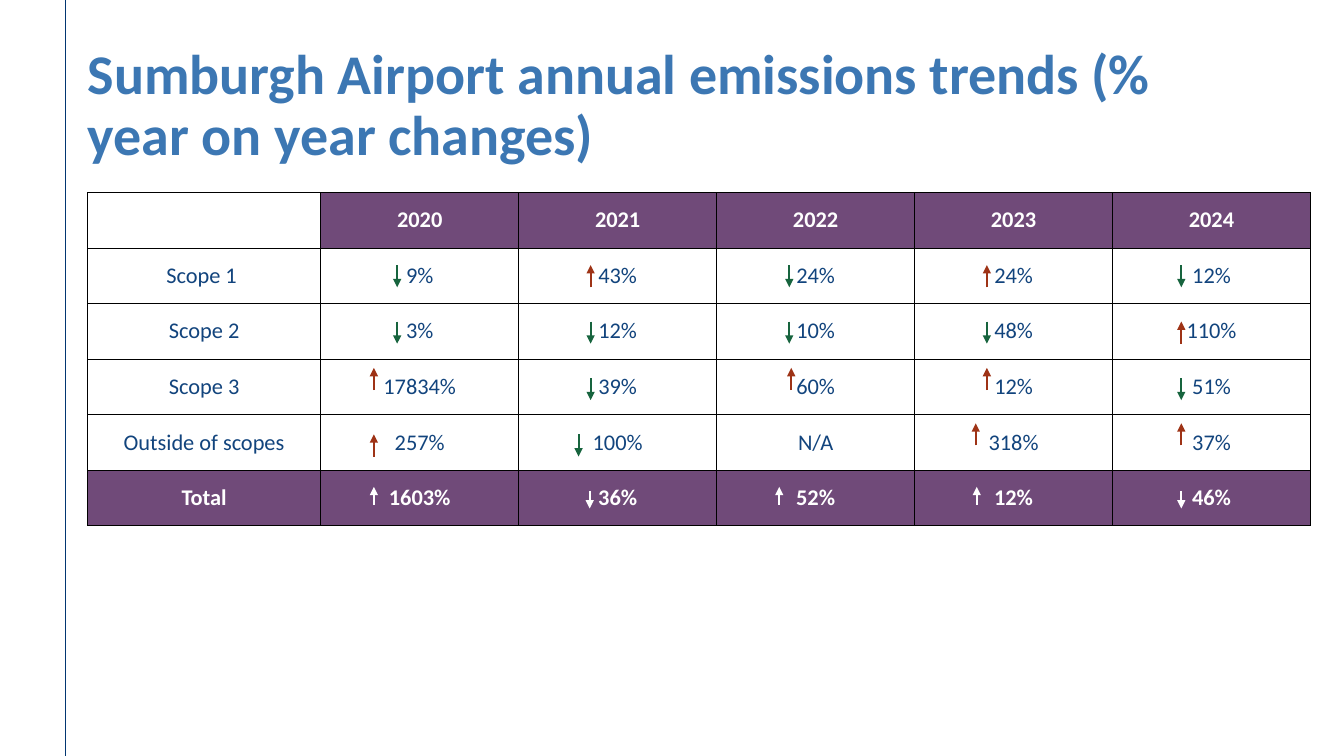
"""Build the Sumburgh Airport annual emissions trends slide."""
from lxml import etree
from pptx import Presentation
from pptx.dml.color import RGBColor
from pptx.enum.shapes import MSO_CONNECTOR
from pptx.enum.text import MSO_ANCHOR, PP_ALIGN
from pptx.oxml import parse_xml
from pptx.oxml.ns import nsdecls, qn
from pptx.util import Pt

STRAIGHT = MSO_CONNECTOR.STRAIGHT
TOP, MIDDLE = MSO_ANCHOR.TOP, MSO_ANCHOR.MIDDLE
LEFT, CENTER = PP_ALIGN.LEFT, PP_ALIGN.CENTER
PURPLE, WHITE, NAVY, BLUE = "704A79", "FFFFFF", "12447D", "3C77B3"
RED, GREEN = "9E3316", "17643E"


def write_text(frame, text, size=16, color=NAVY, bold=False, align=CENTER, anchor=MIDDLE, spacing=1.0):
    frame.word_wrap = True
    frame.vertical_anchor = anchor
    frame.margin_left = frame.margin_right = frame.margin_top = frame.margin_bottom = 0
    paragraph = frame.paragraphs[0]
    paragraph.alignment = align
    paragraph.line_spacing = spacing
    run = paragraph.add_run()
    run.text = text
    run.font.name = "Calibri"
    run.font.size = Pt(size)
    run.font.bold = bold
    run.font.color.rgb = RGBColor.from_string(color)


def draw_line(shapes, x, start, end, color, width, arrow=False):
    connector = shapes.add_connector(STRAIGHT, Pt(x), Pt(start), Pt(x), Pt(end))
    connector.line.color.rgb = RGBColor.from_string(color)
    connector.line.width = Pt(width)
    if arrow:
        etree.SubElement(connector.line._get_or_add_ln(), qn("a:tailEnd"), type="triangle")
    etree.SubElement(connector._element.spPr, qn("a:effectLst"))


presentation = Presentation()
presentation.slide_width, presentation.slide_height = Pt(960), Pt(540)
slide = presentation.slides.add_slide(presentation.slide_layouts[6])
shapes = slide.shapes

draw_line(shapes, 46.8, 0, 540, "023671", 1)
title = shapes.add_textbox(Pt(62.6), Pt(33.1), Pt(789), Pt(76.3))
write_text(title.text_frame, "Sumburgh Airport annual emissions trends (% year on year changes)",
           size=40, color=BLUE, bold=True, align=LEFT, anchor=TOP, spacing=0.9)

rows = [
    ["", "2020", "2021", "2022", "2023", "2024"],
    ["Scope 1 ", "9%", "43%", "24%", "24%", "12%"],
    ["Scope 2", "3%", "12%", "10%", "48%", "110%"],
    ["Scope 3", "17834%", "39%", "60%", "12%", "51%"],
    ["Outside of scopes", "257%", "100%", "N/A", "318%", "37%"],
    ["Total", "1603%", "36%", "52%", "12%", "46%"],
]
column_widths = [166.6] + [141.4] * 5
row_height = 39.7
table = shapes.add_table(len(rows), len(column_widths), Pt(62.5), Pt(137.4),
                         Pt(sum(column_widths)), Pt(row_height * len(rows))).table
table.first_row = table.horz_banding = False
for column, width in zip(table.columns, column_widths):
    column.width = Pt(width)
for row_index, row in enumerate(rows):
    table.rows[row_index].height = Pt(row_height)
    for column_index, text in enumerate(row):
        cell = table.cell(row_index, column_index)
        strong = row_index in (0, len(rows) - 1)
        if strong and text:
            cell.fill.solid()
            cell.fill.fore_color.rgb = RGBColor.from_string(PURPLE)
        else:
            cell.fill.background()
        if text:
            write_text(cell.text_frame, text, color=WHITE if strong else NAVY, bold=strong)
        cell.vertical_anchor = MIDDLE
        cell.margin_left = cell.margin_right = cell.margin_top = cell.margin_bottom = 0
        properties = cell._tc.get_or_add_tcPr()
        for position, side in enumerate(("lnL", "lnR", "lnT", "lnB")):
            properties.insert(position, parse_xml(
                f'<a:{side} {nsdecls("a")} w="{Pt(0.5)}"><a:solidFill>'
                f'<a:srgbClr val="000000"/></a:solidFill></a:{side}>'))

scope_arrows = [
    ("down", 189.4, [283.7, 563.8, 843.8]),
    ("up", 189.4, [421.9, 704.9]),
    ("down", 229.7, [283.7, 421.9, 563.8, 704.9]),
    ("up", 229.7, [843.8]),
    ("down", 270, [421.9, 843.8]),
    ("up", 262.8, [267.1, 565.2, 704.9]),
    ("down", 310.3, [413.3]),
    ("up", 310.3, [267.1]),
    ("up", 302.4, [697, 843.8]),
]
total_arrows = [
    ("up", 347.8, [267.1, 556.6, 697.7]),
    ("down", 350.6, [421.2, 843.8]),
]
for arrows, length, colors in (
    (scope_arrows, 15.8, {"up": RED, "down": GREEN}),
    (total_arrows, 12.6, {"up": WHITE, "down": WHITE}),
):
    for direction, top, positions in arrows:
        start, end = (top, top + length) if direction == "down" else (top + length, top)
        for x in positions:
            draw_line(shapes, x, start, end, colors[direction], 1.5, arrow=True)

presentation.save("out.pptx")
